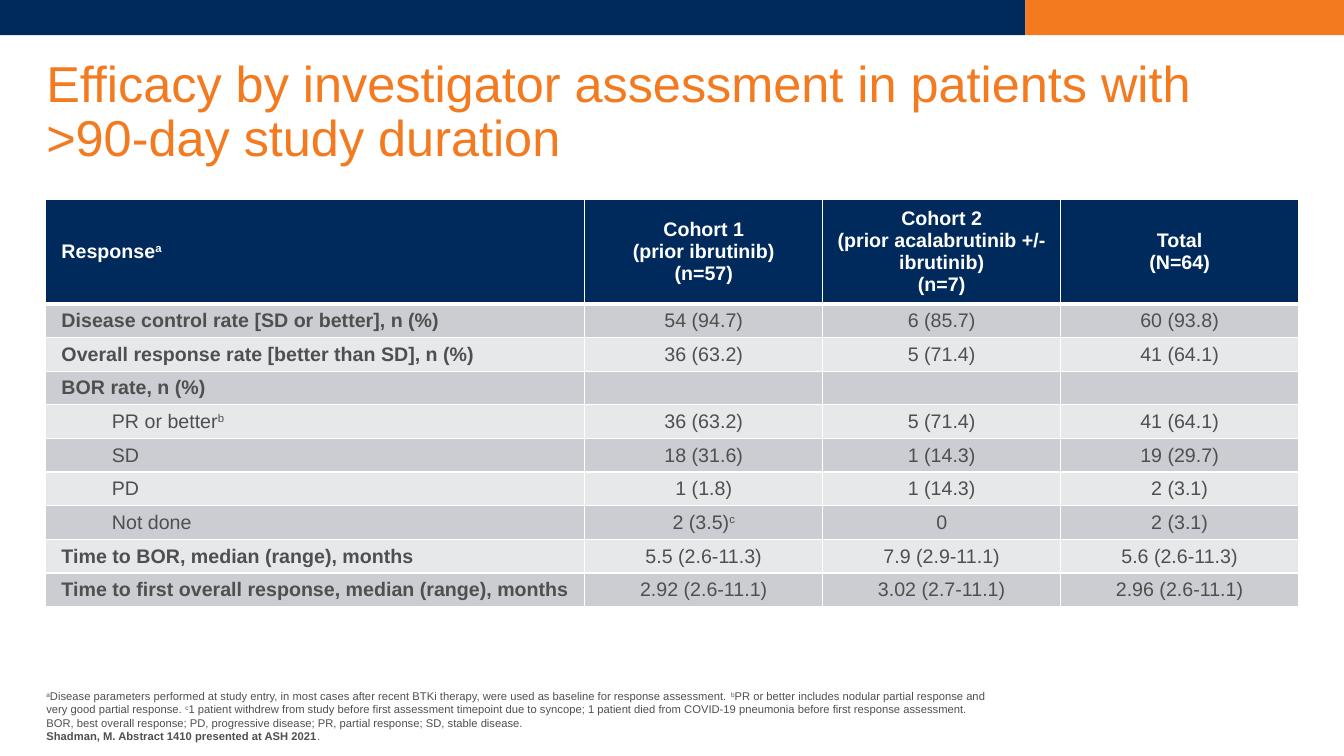
from dataclasses import dataclass
from lxml.etree import SubElement
from pptx import Presentation
from pptx.dml.color import RGBColor
from pptx.enum.shapes import MSO_SHAPE
from pptx.enum.text import MSO_ANCHOR, PP_ALIGN
from pptx.oxml.ns import qn
from pptx.util import Inches, Pt


@dataclass(frozen=True)
class Theme:
    font: str = "Arial"
    navy: str = "002A5C"
    orange: str = "F47A20"
    ink: str = "4E4F4E"
    white: str = "FFFFFF"
    bands: tuple = ("CCCDD2", "E7E8EA")
    title: int = 36
    body: int = 14
    note: int = 8


TITLE = "Efficacy by investigator assessment in patients with >90-day study duration"

# In all texts, *...* is bold and ^...^ is superscript.
HEAD = [
    ["*Response^a^*"],
    ["*Cohort 1*", "*(prior ibrutinib)*", "*(n=57)*"],
    ["*Cohort 2*", "*(prior acalabrutinib +/- ibrutinib)*", "*(n=7)*"],
    ["*Total*", "*(N=64)*"],
]
ROWS = [
    ["*Disease control rate [SD or better], n (%)*", "54 (94.7)", "6 (85.7)", "60 (93.8)"],
    ["*Overall response rate [better than SD], n (%)*", "36 (63.2)", "5 (71.4)", "41 (64.1)"],
    ["*BOR rate, n (%)*", "", "", ""],
    ["PR or better^b^", "36 (63.2)", "5 (71.4)", "41 (64.1)"],
    ["SD", "18 (31.6)", "1 (14.3)", "19 (29.7)"],
    ["PD", "1 (1.8)", "1 (14.3)", "2 (3.1)"],
    ["Not done", "2 (3.5)^c^", "0", "2 (3.1)"],
    ["*Time to BOR, median (range), months*", "5.5 (2.6-11.3)", "7.9 (2.9-11.1)", "5.6 (2.6-11.3)"],
    ["*Time to first overall response, median (range), months*",
     "2.92 (2.6-11.1)", "3.02 (2.7-11.1)", "2.96 (2.6-11.1)"],
]
NOTES = [
    "^a^Disease parameters performed at study entry, in most cases after recent BTKi therapy, "
    "were used as baseline for response assessment. ^b^PR or better includes nodular partial "
    "response and very good partial response. ^c^1 patient withdrew from study before first "
    "assessment timepoint due to syncope; 1 patient died from COVID-19 pneumonia before first "
    "response assessment.",
    "BOR, best overall response; PD, progressive disease; PR, partial response; SD, stable disease.",
    "*Shadman, M. Abstract 1410 presented at ASH 2021*.",
]


class Board:
    def __init__(self, slide, theme):
        self.slide = slide
        self.theme = theme

    def bar(self, left, width, color):
        shape = self.slide.shapes.add_shape(
            MSO_SHAPE.RECTANGLE, Inches(left), 0, Inches(width), Inches(0.35))
        shape.shadow.inherit = False
        shape.fill.solid()
        shape.fill.fore_color.rgb = RGBColor.from_string(color)
        shape.line.fill.background()

    def fill(self, frame, lines, size, color, align=PP_ALIGN.LEFT):
        """Give a frame one paragraph a line, reading the bold and superscript marks."""
        for n, line in enumerate(lines):
            para = frame.add_paragraph() if n else frame.paragraphs[0]
            para.alignment = align
            for i, part in enumerate(line.split("*")):
                for j, piece in enumerate(part.split("^")):
                    if piece:
                        run = para.add_run()
                        run.text = piece
                        self.style(run, size, color, i % 2 == 1, j % 2 == 1)
            if not line:
                SubElement(para._p, qn("a:endParaRPr"), sz=str(size * 100))

    def style(self, run, size, color, bold, raised):
        font = run.font
        font.name = self.theme.font
        font.size = Pt(size)
        font.bold = bold
        font.color.rgb = RGBColor.from_string(color)
        if raised:
            font._element.set("baseline", "30000")

    def text(self, box, lines, size, color, anchor, space=None):
        frame = self.slide.shapes.add_textbox(*map(Inches, box)).text_frame
        frame.word_wrap = True
        frame.vertical_anchor = anchor
        frame.margin_left = frame.margin_right = 0
        frame.margin_top = frame.margin_bottom = 0
        self.fill(frame, lines, size, color)
        if space:
            frame.paragraphs[0].line_spacing = space

    def edge(self, cell, widths):
        """Draw the left, right, top and bottom borders, widths in points."""
        props = cell._tc.get_or_add_tcPr()
        for n, (side, width) in enumerate(zip("LRTB", widths)):
            line = SubElement(props, qn(f"a:ln{side}"), w=str(Pt(width)))
            fill = SubElement(line, qn("a:solidFill"))
            SubElement(fill, qn("a:srgbClr"), val=self.theme.white)
            props.insert(n, line)

    def cell(self, cell, lines, fill, color, first, base):
        cell.fill.solid()
        cell.fill.fore_color.rgb = RGBColor.from_string(fill)
        cell.vertical_anchor = MSO_ANCHOR.MIDDLE
        cell.margin_left = Inches(0.16 if first else 0.1)
        align = PP_ALIGN.LEFT if first else PP_ALIGN.CENTER
        self.fill(cell.text_frame, lines, self.theme.body, color, align)
        if first and not lines[0].startswith("*"):
            para = cell.text_frame.paragraphs[0]
            para.level = 1
            props = para._p.get_or_add_pPr()
            props.set("marL", str(Inches(0.5)))
            props.set("indent", "0")
        self.edge(cell, (1, 1, 1, base))

    def table(self, box, widths, head, rows):
        theme = self.theme
        grid = self.slide.shapes.add_table(
            len(rows) + 1, len(head), *map(Inches, box)).table
        for col, width in zip(grid.columns, widths):
            col.width = Inches(width)
        for n, row in enumerate(grid.rows):
            row.height = Inches(0.3 if n else 0.9)
        for c, lines in enumerate(head):
            self.cell(grid.cell(0, c), lines, theme.navy, theme.white, c == 0, 3)
        for r, row in enumerate(rows):
            for c, text in enumerate(row):
                self.cell(grid.cell(r + 1, c), [text], theme.bands[r % 2],
                          theme.ink, c == 0, 1)


def main():
    deck = Presentation()
    deck.slide_width = Inches(13.33)
    deck.slide_height = Inches(7.5)
    theme = Theme()
    board = Board(deck.slides.add_slide(deck.slide_layouts[6]), theme)
    board.bar(0, 10.17, theme.navy)
    board.bar(10.17, 3.16, theme.orange)
    board.text((0.46, 0.4, 12.43, 1.45), [TITLE], theme.title, theme.orange,
               MSO_ANCHOR.MIDDLE, 0.9)
    board.table((0.45, 1.98, 12.43, 3.6), (5.35, 2.36, 2.36, 2.36), HEAD, ROWS)
    board.text((0.46, 6.95, 9.37, 0.42), NOTES, theme.note, theme.ink, MSO_ANCHOR.BOTTOM)
    deck.save("out.pptx")


if __name__ == "__main__":
    main()
